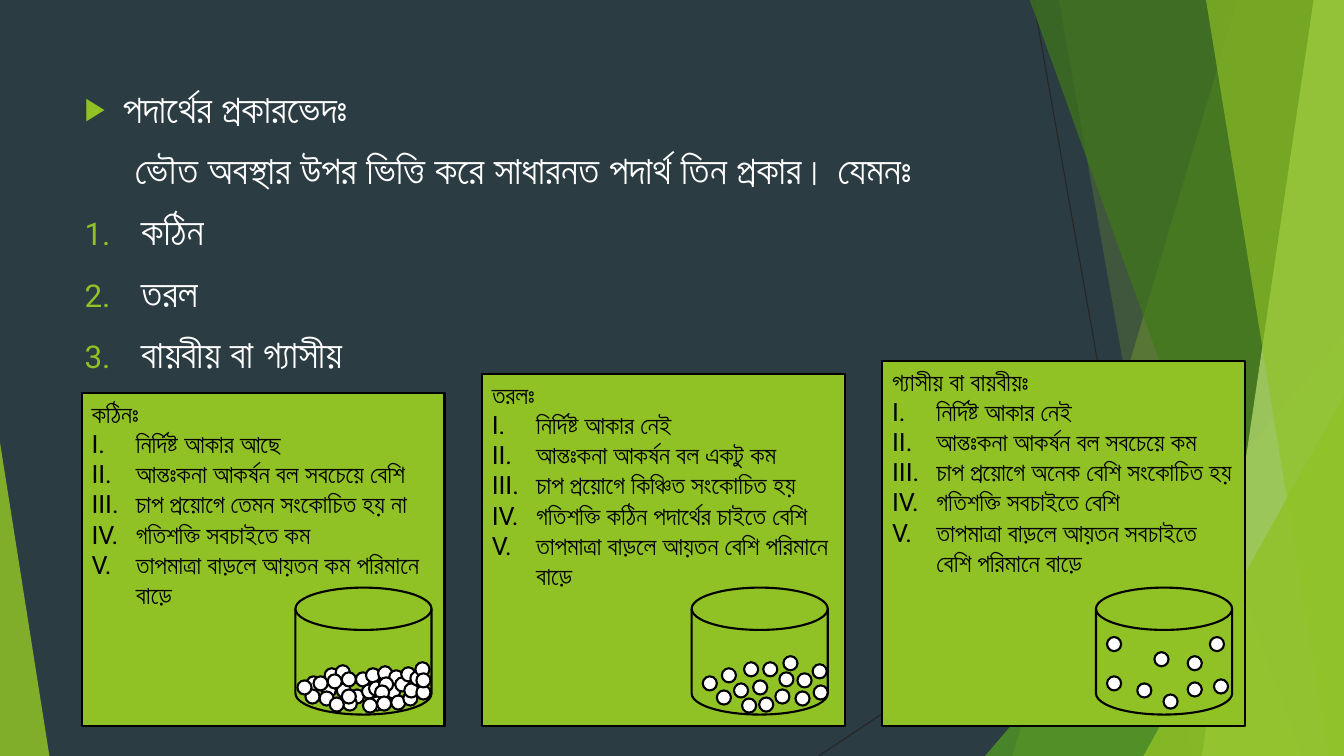
from dataclasses import dataclass

import pptx
import pptx.dml.color
import pptx.enum.shapes
import pptx.enum.text
import pptx.oxml.ns
import pptx.util
from lxml import etree
from pptx.util import Inches

PRESET = pptx.enum.shapes.MSO_SHAPE


@dataclass(frozen=True)
class Theme:
    background: str = "2C3C43"
    lime: str = "90C226"
    green: str = "54A021"
    forest: str = "3F7819"
    pale: str = "C0E474"
    ray: str = "262626"
    white: str = "FFFFFF"
    black: str = "000000"
    font: str = "Roboto"
    bullet_font: str = "Arial"
    intro_size: int = 28
    card_size: int = 18
    outline: float = 1.5
    ray_width: float = 0.75


THEME = Theme()
SLIDE_W, SLIDE_H = 13.33, 7.5
CARD_LEFT, CARD_STEP, CARD_W, CARD_BOTTOM = 0.81, 3.97, 3.6, 7.2
BEAKER_TOP, BEAKER_W, BEAKER_H = 5.83, 1.35, 1.26
PARTICLE = 0.14

# Bengali letters with a nukta: base letter code, single-letter code
NUKTA = 0x09BC
NUKTA_LETTERS = [(0x09AF, 0x09DF), (0x09A1, 0x09DC), (0x09A2, 0x09DD)]

# Backdrop rays: start x, start y, end x, end y
RAYS = [(10.25, 0, 11.58, 7.5), (13.33, 4.03, 8.12, 7.5)]

# Backdrop facets, back to front.
# Bands: top-left x, bottom-left x. Triangles: left, top, width, apex.
FACETS = [
    ("band", (12.28, 10.04), THEME.lime, 30),
    ("band", (10.5, 11.83), THEME.lime, 20),
    ("triangle", (9.77, 3.33, 3.56, 1), THEME.green, 72),
    ("band", (10.21, 12.91), THEME.forest, 70),
    ("band", (13.03, 11.92), THEME.pale, 70),
    ("band", (11.96, 13.18), THEME.lime, 65),
    ("triangle", (11.34, 3.93, 1.99, 1), THEME.lime, 80),
    ("triangle", (0, 4.39, 0.49, 0), THEME.lime, 85),
]

# Intro lines: text, left margin, first-line indent, bullet
INTRO = [
    ("পদার্থের প্রকারভেদঃ", 0.38, -0.38, "▶"),
    ("ভৌত অবস্থার উপর ভিত্তি করে সাধারনত পদার্থ তিন প্রকার। যেমনঃ", 0, 0.5, None),
    ("কঠিন", 0.56, -0.56, "arabicPeriod"),
    ("তরল", 0.56, -0.56, "arabicPeriod"),
    ("বায়বীয় বা গ্যাসীয়", 0.56, -0.56, "arabicPeriod"),
]

# State cards: card top, heading, properties, beaker left, particle corners
STATES = [
    (3.9, "কঠিনঃ",
     ["নির্দিষ্ট আকার আছে", "আন্তঃকনা আকর্ষন বল সবচেয়ে বেশি",
      "চাপ প্রয়োগে তেমন সংকোচিত হয় না", "গতিশক্তি সবচাইতে কম",
      "তাপমাত্রা বাড়লে আয়তন কম পরিমানে বাড়ে"],
     2.93,
     [(3.04, 6.71), (3.19, 6.78), (3.34, 6.78), (3.22, 6.63), (3.33, 6.6), (3.39, 6.67),
      (3.47, 6.84), (3.53, 6.67), (3.59, 6.79), (3.63, 6.63), (3.66, 6.76), (3.75, 6.61),
      (3.83, 6.79), (3.86, 6.65), (3.92, 6.72), (3.76, 6.72), (3.72, 6.8), (3.67, 6.91),
      (3.6, 6.93), (3.4, 6.91), (3.39, 6.84), (3.25, 6.69), (3.03, 6.84), (3.11, 6.71),
      (3.17, 6.86), (3.74, 6.91), (3.88, 6.9), (4, 6.86), (4.01, 6.78), (4.13, 6.8),
      (3.98, 6.62), (4.07, 6.66), (4.12, 6.57), (4.13, 6.68), (3.27, 6.92), (2.95, 6.75)]),
    (3.71, "তরলঃ",
     ["নির্দিষ্ট আকার নেই", "আন্তঃকনা আকর্ষন বল একটু কম",
      "চাপ প্রয়োগে কিঞ্চিত সংকোচিত হয়", "গতিশক্তি কঠিন পদার্থের চাইতে বেশি",
      "তাপমাত্রা বাড়লে আয়তন বেশি পরিমানে বাড়ে"],
     6.86,
     [(6.97, 6.71), (7.11, 6.85), (7.28, 6.78), (7.16, 6.63), (7.36, 6.93), (7.57, 6.57),
      (7.47, 6.75), (7.73, 6.67), (7.77, 6.51), (7.53, 6.92), (7.38, 6.57), (7.69, 6.84),
      (7.89, 6.86), (8.07, 6.8), (7.91, 6.68), (8.06, 6.59)]),
    (3.58, "গ্যাসীয় বা বায়বীয়ঃ",
     ["নির্দিষ্ট আকার নেই", "আন্তঃকনা আকর্ষন বল সবচেয়ে কম",
      "চাপ প্রয়োগে অনেক বেশি সংকোচিত হয়", "গতিশক্তি সবচাইতে বেশি",
      "তাপমাত্রা বাড়লে আয়তন সবচাইতে বেশি পরিমানে বাড়ে"],
     10.87,
     [(10.98, 6.71), (11.28, 6.78), (11.45, 6.47), (11.78, 6.51), (11.54, 6.89),
      (10.98, 6.32), (11.78, 6.77), (12.04, 6.74), (12, 6.32)]),
]


def rgb(color):
    return pptx.dml.color.RGBColor.from_string(color)


def add_tag(parent, tag, **attributes):
    return etree.SubElement(parent, pptx.oxml.ns.qn(tag), attributes)


def join_nuktas(text):
    """Store each letter with a nukta as one character."""
    for base, letter in NUKTA_LETTERS:
        text = text.replace(chr(base) + chr(NUKTA), chr(letter))
    return text


def add_ray(slide, x1, y1, x2, y2):
    ray = slide.shapes.add_connector(pptx.enum.shapes.MSO_CONNECTOR.STRAIGHT,
                                     Inches(x1), Inches(y1), Inches(x2), Inches(y2))
    ray.line.color.rgb = rgb(THEME.ray)
    ray.line.width = pptx.util.Pt(THEME.ray_width)
    add_tag(ray._element.spPr, "a:effectLst")


def add_facet(slide, kind, geometry, color, opacity):
    if kind == "band":
        top_x, bottom_x = geometry
        outline = slide.shapes.build_freeform(Inches(top_x), Inches(-0.01), scale=1.0)
        outline.add_line_segments([(Inches(SLIDE_W), Inches(-0.01)),
                                   (Inches(SLIDE_W), Inches(SLIDE_H)),
                                   (Inches(bottom_x), Inches(SLIDE_H))], close=True)
        facet = outline.convert_to_shape()
    else:
        left, top, width, apex = geometry
        facet = slide.shapes.add_shape(PRESET.ISOSCELES_TRIANGLE, Inches(left), Inches(top),
                                       Inches(width), Inches(SLIDE_H - top))
        facet.adjustments[0] = apex
    facet.shadow.inherit = False
    facet.line.fill.background()
    facet.fill.solid()
    facet.fill.fore_color.rgb = rgb(color)
    tint = facet._element.spPr.find(".//" + pptx.oxml.ns.qn("a:srgbClr"))
    add_tag(tint, "a:alpha", val=str(opacity * 1000))


def add_outlined(shapes, preset, left, top, width, height, color):
    outlined = shapes.add_shape(preset, Inches(left), Inches(top), Inches(width), Inches(height))
    outlined.shadow.inherit = False
    outlined.fill.solid()
    outlined.fill.fore_color.rgb = rgb(color)
    outlined.line.color.rgb = rgb(THEME.black)
    outlined.line.width = pptx.util.Pt(THEME.outline)
    return outlined


def fill_text(frame, lines, size, color, space_before=0, bullet_color=None):
    """Lines hold text, left margin, first-line indent and bullet."""
    frame.word_wrap = True
    frame.vertical_anchor = pptx.enum.text.MSO_ANCHOR.TOP
    frame.text = join_nuktas("\n".join(line[0] for line in lines))
    for paragraph, (_, margin, indent, bullet) in zip(frame.paragraphs, lines):
        paragraph.alignment = pptx.enum.text.PP_ALIGN.LEFT
        paragraph.space_before = pptx.util.Pt(space_before)
        properties = paragraph._p.get_or_add_pPr()
        properties.set("marL", str(Inches(margin)))
        properties.set("indent", str(Inches(indent)))
        if bullet:
            if bullet_color:
                add_tag(add_tag(properties, "a:buClr"), "a:srgbClr", val=bullet_color)
                add_tag(properties, "a:buSzPct", val="80000")
            add_tag(properties, "a:buFont", typeface=THEME.bullet_font)
            if len(bullet) == 1:
                add_tag(properties, "a:buChar", char=bullet)
            else:
                add_tag(properties, "a:buAutoNum", type=bullet)
        for run in paragraph.runs:
            run.font.size = pptx.util.Pt(size)
            run.font.color.rgb = rgb(color)
            run.font.name = THEME.font
            # Bengali takes its font from the complex-script slot
            add_tag(run._r.get_or_add_rPr(), "a:cs", typeface=THEME.font)


def add_card(slide, left, top, heading, properties):
    card = add_outlined(slide.shapes, PRESET.RECTANGLE, left, top,
                        CARD_W, CARD_BOTTOM - top, THEME.lime)
    lines = [(heading, 0, 0, None)]
    lines += [(text, 0.44, -0.44, "romanUcPeriod") for text in properties]
    fill_text(card.text_frame, lines, THEME.card_size, THEME.black)


def add_beaker(slide, left, particles):
    beaker = slide.shapes.add_group_shape()
    add_outlined(beaker.shapes, PRESET.FLOWCHART_MAGNETIC_DISK, left, BEAKER_TOP,
                 BEAKER_W, BEAKER_H, THEME.lime)
    for x, y in particles:
        add_outlined(beaker.shapes, PRESET.OVAL, x, y, PARTICLE, PARTICLE, THEME.white)


def main():
    deck = pptx.Presentation()
    deck.slide_width, deck.slide_height = Inches(SLIDE_W), Inches(SLIDE_H)
    slide = deck.slides.add_slide(deck.slide_layouts[6])

    # Backdrop
    slide.background.fill.solid()
    slide.background.fill.fore_color.rgb = rgb(THEME.background)
    for ray in RAYS:
        add_ray(slide, *ray)
    for facet in FACETS:
        add_facet(slide, *facet)

    # Introduction
    intro = slide.shapes.add_textbox(Inches(0.74), Inches(0.79), Inches(11.83), Inches(5.82))
    fill_text(intro.text_frame, INTRO, THEME.intro_size, THEME.white, 10, THEME.lime)

    # States of matter
    for column, (top, heading, properties, _, _) in enumerate(STATES):
        add_card(slide, CARD_LEFT + column * CARD_STEP, top, heading, properties)
    for _, _, _, beaker_left, particles in STATES:
        add_beaker(slide, beaker_left, particles)

    deck.save("out.pptx")


if __name__ == "__main__":
    main()
